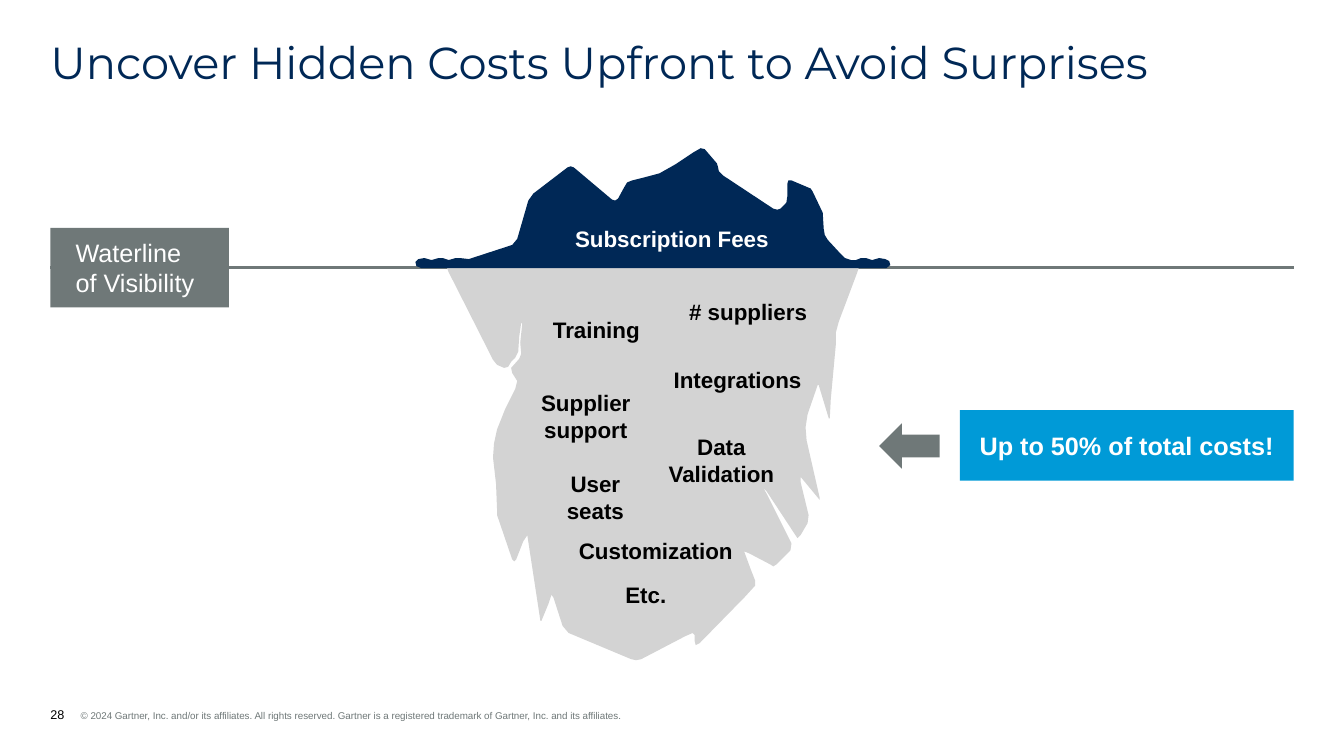
from lxml.etree import SubElement
from pptx import Presentation
from pptx.dml.color import RGBColor
from pptx.enum.shapes import MSO_CONNECTOR, MSO_SHAPE
from pptx.enum.text import MSO_ANCHOR, PP_ALIGN
from pptx.oxml.ns import qn
from pptx.util import Inches, Pt

WIDTH, HEIGHT, MARGIN = 13.33, 7.5, 0.5
RIGHT = WIDTH - MARGIN
WATERLINE = 2.65
LABEL_LINE = 0.27
NAVY, GREY, BLUE, ICE = "002856", "6F7878", "009AD7", "D3D3D3"
WHITE, BLACK = "FFFFFF", "000000"

TITLE = "Uncover Hidden Costs Upfront to Avoid Surprises"
PAGE = "28"
COPYRIGHT = ("© 2024 Gartner, Inc. and/or its affiliates. All rights reserved.\u00a0"
             "Gartner is a registered trademark of Gartner, Inc. and its affiliates.")

# text, left, top, width, lines, colour
LABELS = [
    ("Subscription Fees", 5.66, 2.23, 2.01, 1, WHITE),
    ("# suppliers", 6.76, 2.96, 1.32, 1, BLACK),
    ("Training", 5.43, 3.13, 0.97, 1, BLACK),
    ("Integrations", 6.67, 3.63, 1.29, 1, BLACK),
    ("Supplier support", 5.15, 3.86, 1.32, 2, BLACK),
    ("Data Validation", 6.51, 4.29, 1.29, 2, BLACK),
    ("User seats", 5.4, 4.66, 1.01, 2, BLACK),
    ("Customization", 5.7, 5.33, 1.61, 1, BLACK),
    ("Etc.", 5.6, 5.76, 1.61, 1, BLACK),
]

# outlines in hundredths of an inch
UNDER_WATER = [
    (547, 590), (544, 599), (537, 616), (536, 616), (523, 531), (519, 537), (512, 555),
    (510, 557), (508, 555), (493, 511), (493, 506), (492, 480), (489, 454), (490, 440),
    (493, 426), (501, 406), (511, 386), (513, 378), (508, 370), (507, 365), (515, 356),
    (517, 351), (516, 340), (518, 321), (517, 320), (515, 334), (514, 349), (511, 355),
    (507, 359), (504, 364), (500, 365), (493, 362), (489, 357), (445, 270), (443, 265),
    (852, 265), (850, 271), (832, 319), (829, 330), (829, 342), (824, 396), (823, 415),
    (822, 415), (812, 382), (811, 382), (801, 411), (799, 424), (800, 437), (813, 494),
    (813, 496), (794, 473), (794, 478), (802, 511), (801, 519), (794, 531), (791, 534),
    (789, 531), (760, 487), (757, 484), (761, 491), (785, 539), (784, 546), (770, 560),
    (767, 562), (764, 560), (743, 549), (738, 547), (745, 566), (749, 576), (749, 581),
    (739, 592), (694, 638), (690, 640), (689, 636), (689, 630), (687, 628), (680, 631),
    (636, 654), (631, 655), (626, 654), (564, 628), (558, 621), (549, 593),
]
ABOVE_WATER = [
    (418, 266), (413, 264), (412, 260), (415, 257), (421, 256), (428, 258), (435, 256),
    (439, 256), (445, 258), (452, 256), (456, 256), (465, 257), (508, 243), (513, 237),
    (524, 199), (529, 192), (563, 166), (566, 165), (569, 166), (607, 198), (610, 199),
    (613, 197), (619, 186), (622, 181), (627, 179), (639, 176), (654, 172), (670, 163),
    (688, 151), (695, 147), (699, 148), (711, 162), (712, 165), (713, 170), (717, 174),
    (767, 207), (771, 208), (774, 207), (780, 201), (781, 194), (781, 182), (782, 179),
    (785, 179), (804, 187), (806, 190), (816, 211), (817, 227), (818, 233), (821, 238),
    (833, 251), (838, 256), (844, 258), (849, 258), (854, 256), (859, 256), (865, 258),
    (872, 256), (878, 257), (882, 259), (883, 263), (879, 266),
]


def color(hex_code):
    return RGBColor.from_string(hex_code)


def box(*lengths):
    return [Inches(v) for v in lengths]


def paint(shape, hex_code):
    shape.shadow.inherit = False
    shape.fill.solid()
    shape.fill.fore_color.rgb = color(hex_code)
    shape.line.fill.background()


def set_frame(tf, anchor, left=0, right=0):
    values = {"margin_left": Inches(left), "margin_right": Inches(right), "margin_top": 0,
              "margin_bottom": 0, "word_wrap": True, "vertical_anchor": anchor}
    for name, value in values.items():
        setattr(tf, name, value)


def add_run(p, text, size, hex_code, bold=False, face="Arial"):
    if "\v" in text:
        p.text = text
        runs = p.runs
    else:
        runs = [p.add_run()]
        runs[0].text = text
    for r in runs:
        for name, value in {"size": Pt(size), "bold": bold, "name": face}.items():
            setattr(r.font, name, value)
        r.font.color.rgb = color(hex_code)


def add_outline(s, points, hex_code):
    builder = s.shapes.build_freeform(*points[0], scale=Inches(0.01))
    builder.add_line_segments(points[1:], close=True)
    paint(builder.convert_to_shape(), hex_code)


def add_panel(s, place, hex_code, text, bold, align, left=0, right=0):
    panel = s.shapes.add_shape(MSO_SHAPE.RECTANGLE, *box(*place))
    paint(panel, hex_code)
    set_frame(panel.text_frame, MSO_ANCHOR.MIDDLE, left, right)
    p = panel.text_frame.paragraphs[0]
    p.alignment = align
    add_run(p, text, 18, WHITE, bold)


def add_footer(s):
    tf = s.shapes.add_textbox(*box(MARGIN, 7.01, 7.85, 0.15)).text_frame
    set_frame(tf, MSO_ANCHOR.BOTTOM)
    p = tf.paragraphs[0]
    pPr = p._p.get_or_add_pPr()
    pPr.set("marL", str(Inches(0.3)))
    pPr.set("indent", str(-Inches(0.3)))
    tabs = SubElement(pPr, qn("a:tabLst"))
    SubElement(tabs, qn("a:tab"), pos=str(Inches(0.32)), algn="l")
    add_run(p, PAGE, 9, BLACK)
    add_run(p, "\t" + COPYRIGHT, 7, GREY)


def main():
    prs = Presentation()
    prs.slide_width, prs.slide_height = box(WIDTH, HEIGHT)
    s = prs.slides.add_slide(prs.slide_layouts[5])

    title = s.shapes.title
    title.left, title.top, title.width, title.height = box(MARGIN, 0.4, RIGHT - MARGIN, 0.48)
    set_frame(title.text_frame, MSO_ANCHOR.TOP)
    p = title.text_frame.paragraphs[0]
    p.alignment, p.line_spacing = PP_ALIGN.LEFT, 0.9
    add_run(p, TITLE, 32, NAVY, face="Montserrat")
    add_footer(s)

    line = s.shapes.add_connector(MSO_CONNECTOR.STRAIGHT,
                                  *box(RIGHT, WATERLINE, MARGIN, WATERLINE))
    line.line.color.rgb, line.line.width = color(GREY), Pt(2)
    SubElement(line._element.spPr, qn("a:effectLst"))

    add_outline(s, UNDER_WATER, ICE)
    add_outline(s, ABOVE_WATER, NAVY)

    add_panel(s, (MARGIN, 2.26, 1.77, 0.79), GREY, "Waterline\vof Visibility",
              False, PP_ALIGN.LEFT, 0.25, 0.1)
    add_panel(s, (9.52, 4.07, RIGHT - 9.52, 0.7), BLUE, "Up to 50% of total costs!",
              True, PP_ALIGN.CENTER)
    paint(s.shapes.add_shape(MSO_SHAPE.LEFT_ARROW, *box(8.72, 4.2, 0.6, 0.45)), GREY)

    for text, left, top, width, lines, hex_code in LABELS:
        tf = s.shapes.add_textbox(*box(left, top, width, lines * LABEL_LINE)).text_frame
        set_frame(tf, MSO_ANCHOR.MIDDLE)
        p = tf.paragraphs[0]
        p.alignment = PP_ALIGN.CENTER
        add_run(p, text, 16, hex_code, True)

    prs.save("out.pptx")


if __name__ == "__main__":
    main()
